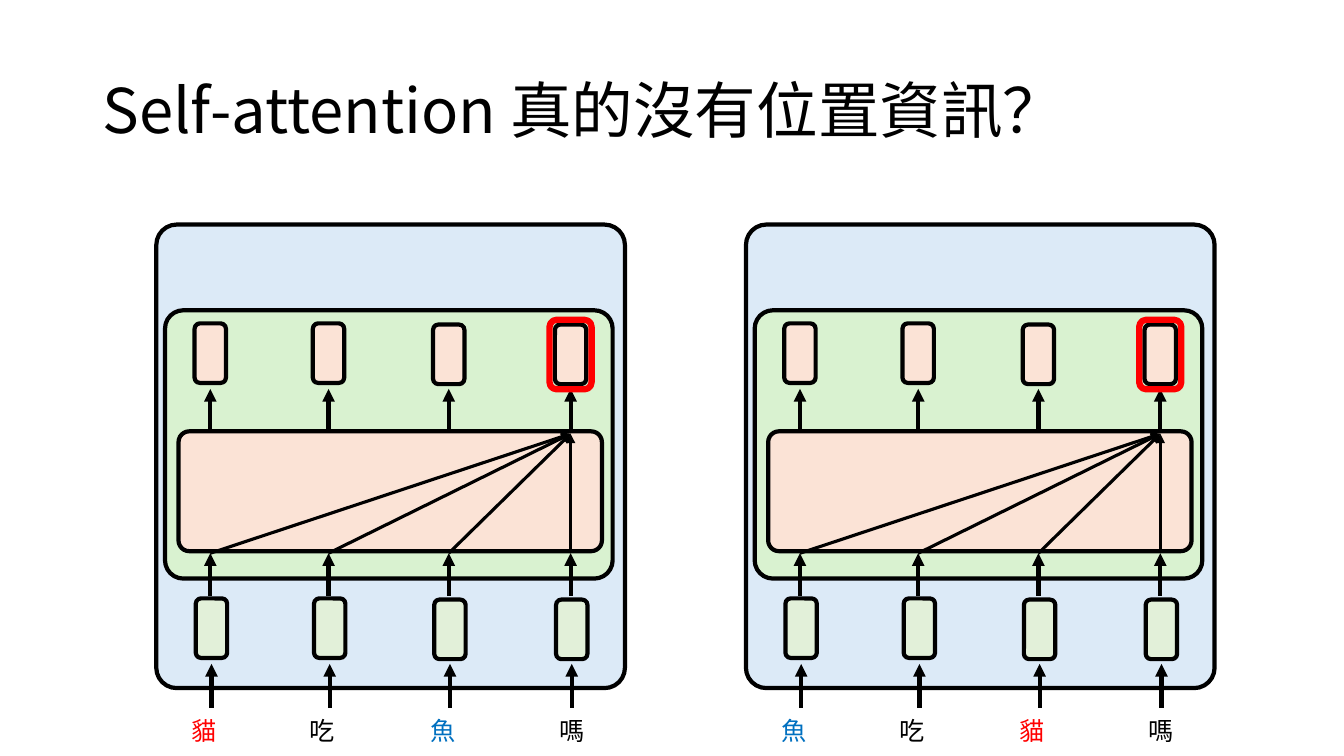
from pptx import Presentation
from pptx.dml.color import RGBColor
from pptx.enum.shapes import MSO_CONNECTOR, MSO_SHAPE
from pptx.enum.text import MSO_ANCHOR, PP_ALIGN
from pptx.oxml.ns import qn
from pptx.util import Cm, Pt
from lxml import etree

ROUNDED = MSO_SHAPE.ROUNDED_RECTANGLE
STRAIGHT = MSO_CONNECTOR.STRAIGHT
MIDDLE = MSO_ANCHOR.MIDDLE
LEFT, CENTER = PP_ALIGN.LEFT, PP_ALIGN.CENTER

FONT = "Noto Sans CJK SC"
COLORS = {
    "black": "000000",
    "red": "FF0000",
    "blue": "0070C0",
    "model": "DCEAF7",
    "layer": "D9F2D0",
    "attention": "FBE3D6",
    "input": "E2F0D9",
}
COLUMNS = (1.36, 4.34, 7.37, 10.44)
TOKEN_WIDTH, TOKEN_HEIGHT = 0.79, 1.5
CAT, EAT, FISH, QUESTION = ("貓", "red"), ("吃", "black"), ("魚", "blue"), ("嗎", "black")


def color(name):
    return RGBColor.from_string(COLORS[name])


def write_text(frame, text, size, color_name, alignment):
    frame.text = text
    paragraph = frame.paragraphs[0]
    paragraph.alignment = alignment
    paragraph.font.name = FONT
    paragraph.font.size = Pt(size)
    paragraph.font.color.rgb = color(color_name)
    properties = paragraph._p.pPr.find(qn("a:defRPr"))
    east_asian = etree.SubElement(properties, qn("a:ea"))
    east_asian.set("typeface", FONT)
    return paragraph


def add_box(slide, left, top, width, height, fill=None, line="black", weight=3, rounding=0.1667):
    shape = slide.shapes.add_shape(ROUNDED, Cm(left), Cm(top), Cm(width), Cm(height))
    shape.adjustments[0] = rounding
    shape.shadow.inherit = False
    if fill:
        shape.fill.solid()
        shape.fill.fore_color.rgb = color(fill)
    else:
        shape.fill.background()
    shape.line.color.rgb = color(line)
    shape.line.width = Pt(weight)


def add_arrow(slide, start_x, start_y, end_x, end_y, weight=3):
    connector = slide.shapes.add_connector(
        STRAIGHT, Cm(start_x), Cm(start_y), Cm(end_x), Cm(end_y))
    connector.line.color.rgb = color("black")
    connector.line.width = Pt(weight)
    line = connector.line._get_or_add_ln()
    etree.SubElement(line, qn("a:tailEnd")).set("type", "triangle")
    etree.SubElement(connector._element.spPr, qn("a:effectLst"))


def add_label(slide, center, top, text, color_name):
    width = 1.52
    label = slide.shapes.add_textbox(Cm(center - width / 2), Cm(top), Cm(width), Cm(1.02))
    label.text_frame.word_wrap = True
    write_text(label.text_frame, text, 18, color_name, CENTER)


def add_title(slide, left, top, width, height):
    title = slide.shapes.title
    title.left, title.top, title.width, title.height = Cm(left), Cm(top), Cm(width), Cm(height)
    title.text_frame.vertical_anchor = MIDDLE
    paragraph = write_text(title.text_frame, "Self-attention 真的沒有位置資訊？", 44, "black", LEFT)
    paragraph.line_spacing = 0.9


def add_token(slide, left, top, index, token):
    center = left + COLUMNS[index]
    is_last = index == len(COLUMNS) - 1
    drop = 0.03 if index >= 2 else 0
    for fill, offset, shift in (("input", 9.42, 0.03), ("attention", 2.49, 0)):
        add_box(slide, center + shift - TOKEN_WIDTH / 2, top + offset + drop,
                TOKEN_WIDTH, TOKEN_HEIGHT, fill)
    for start, end, shift in ((12.17, 11.07, 0.03), (9.35, 8.28, 0), (5.21, 4.14, 0)):
        add_arrow(slide, center + shift, top + start, center + shift, top + end)
    text, color_name = token
    add_label(slide, center + (0.03 if is_last else -0.15), top + 12.24, text, color_name)


def add_model(slide, left, top, width, height, tokens):
    add_box(slide, left, top, width, height, "model", rounding=0.044)
    add_box(slide, left + 0.22, top + 2.16, width - 0.53, 6.76, "layer", rounding=0.068)
    add_box(slide, left + 0.56, top + 5.21, width - 1.14, 3.02, "attention", rounding=0.09)
    for index, token in enumerate(tokens):
        add_token(slide, left, top, index, token)
    target = left + COLUMNS[-1]
    for column in COLUMNS:
        add_arrow(slide, left + column, top + 8.28, target, top + 5.27, 2.25)
    add_box(slide, target - 0.53, top + 2.4, 1.06, 1.75, line="red", weight=4.5)


def main():
    presentation = Presentation()
    presentation.slide_width, presentation.slide_height = Cm(33.87), Cm(19.05)
    slide = presentation.slides.add_slide(presentation.slide_layouts[5])
    add_title(slide, 2.33, 1.01, 29.21, 3.68)
    add_model(slide, 3.94, 5.66, 11.81, 11.68, (CAT, EAT, FISH, QUESTION))
    add_model(slide, 18.8, 5.66, 11.81, 11.68, (FISH, EAT, CAT, QUESTION))
    presentation.save("out.pptx")


if __name__ == "__main__":
    main()
